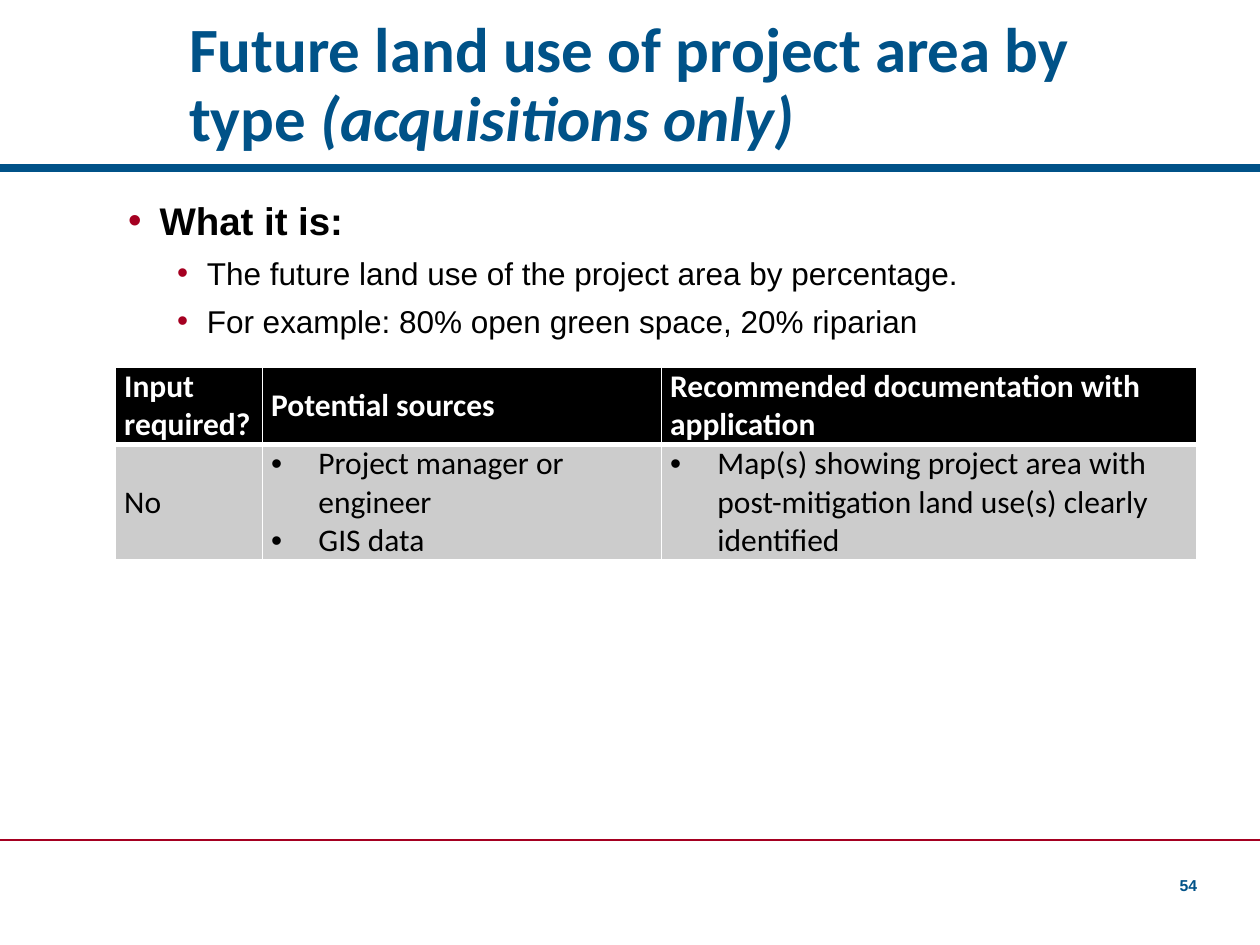
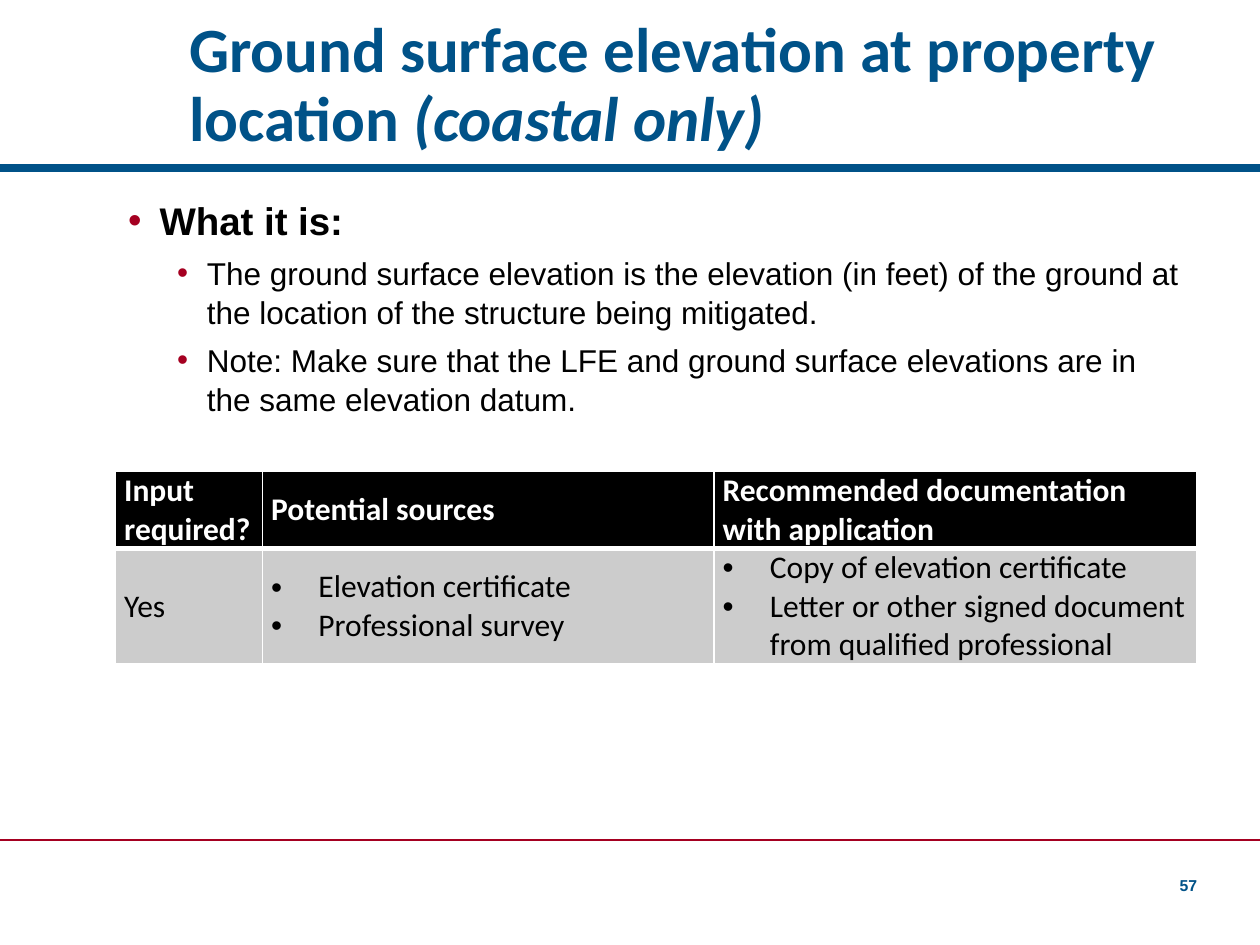
"""Build two slides describing land use and ground elevation inputs."""
from lxml import etree
from pptx import Presentation
from pptx.dml.color import RGBColor
from pptx.enum.shapes import MSO_CONNECTOR
from pptx.enum.text import MSO_ANCHOR, MSO_AUTO_SIZE, PP_ALIGN
from pptx.oxml.ns import qn
from pptx.util import Pt

BLUE = RGBColor(0x00, 0x52, 0x88)
RED = RGBColor(0xA5, 0x00, 0x21)
BLACK = RGBColor(0x00, 0x00, 0x00)
WHITE = RGBColor(0xFF, 0xFF, 0xFF)
GREY = RGBColor(0xCC, 0xCC, 0xCC)
STRAIGHT = MSO_CONNECTOR.STRAIGHT
BOTTOM, MIDDLE, TOP = MSO_ANCHOR.BOTTOM, MSO_ANCHOR.MIDDLE, MSO_ANCHOR.TOP
LEFT, RIGHT = PP_ALIGN.LEFT, PP_ALIGN.RIGHT
NO_AUTOFIT = MSO_AUTO_SIZE.NONE
HEADING_FONT, BODY_FONT = "Calibri", "Arial"
SLIDE_WIDTH, SLIDE_HEIGHT = 720, 540
CONTENT_LEFT, CONTENT_WIDTH = 66, 618
ROW_HEIGHTS = (44, 66)
HEADERS = ("Input required?", "Potential sources",
           "Recommended documentation with application")

SLIDES = (
    {
        "title": "Future land use of project area by type ",
        "qualifier": "(acquisitions only)",
        "points": ("The future land use of the project area by percentage.",
                   "For example: 80% open green space, 20% riparian"),
        "table_top": 210,
        "columns": (84, 228, 306),
        "required": "No",
        "sources": ("Project manager or engineer", "GIS data"),
        "documents": ("Map(s) showing project area with post-mitigation "
                      "land use(s) clearly identified",),
        "number": "54",
    },
    {
        "title": "Ground surface elevation at property location ",
        "qualifier": "(coastal only)",
        "points": ("The ground surface elevation is the elevation (in feet) of the "
                   "ground at the location of the structure being mitigated.",
                   "Note: Make sure that the LFE and ground surface elevations "
                   "are in the same elevation datum."),
        "table_top": 269.5,
        "columns": (84, 258, 276),
        "required": "Yes",
        "sources": ("Elevation certificate", "Professional survey"),
        "documents": ("Copy of elevation certificate",
                      "Letter or other signed document from qualified professional"),
        "number": "57",
    },
)


def place(shape, left, top, width, height):
    """Move and size a shape in points."""
    shape.left, shape.top = Pt(left), Pt(top)
    shape.width, shape.height = Pt(width), Pt(height)


def set_font(paragraph, name, size, color, bold=False):
    """Format the whole paragraph."""
    font = paragraph.font
    font.name, font.size, font.bold = name, Pt(size), bold
    font.color.rgb = color


def set_insets(frame, left, top, right, bottom):
    """Set the inner margins of a text frame or cell in points."""
    frame.margin_left, frame.margin_top = Pt(left), Pt(top)
    frame.margin_right, frame.margin_bottom = Pt(right), Pt(bottom)


def set_bullet(paragraph, indent, hanging, color):
    """Give a paragraph a round bullet with a hanging indent."""
    properties = paragraph._p.get_or_add_pPr()
    properties.set("marL", str(Pt(indent)))
    properties.set("indent", str(-Pt(hanging)))
    bullet_color = etree.SubElement(properties, qn("a:buClr"))
    etree.SubElement(bullet_color, qn("a:srgbClr"), val=str(color))
    etree.SubElement(properties, qn("a:buFont"), typeface="Arial")
    etree.SubElement(properties, qn("a:buChar"), char="•")


def add_rule(slide, top, color, width):
    """Draw a line across the slide."""
    rule = slide.shapes.add_connector(
        STRAIGHT, Pt(0), Pt(top), Pt(SLIDE_WIDTH), Pt(top))
    rule.line.color.rgb = color
    rule.line.width = Pt(width)
    etree.SubElement(rule._element.spPr, qn("a:effectLst"))


def fill_title(slide, title, qualifier):
    """Write the title with its qualifier in italics."""
    shape = slide.shapes.title
    place(shape, 108, 0, 576, 92)
    frame = shape.text_frame
    frame.auto_size = NO_AUTOFIT
    frame.vertical_anchor = BOTTOM
    set_insets(frame, 0, 3.6, 7.2, 3.6)
    paragraph = frame.paragraphs[0]
    paragraph.alignment = LEFT
    paragraph.line_spacing = 0.9
    set_font(paragraph, HEADING_FONT, 36, BLUE, bold=True)
    paragraph.add_run().text = title
    run = paragraph.add_run()
    run.text = qualifier
    run.font.italic = True


def fill_body(slide, points):
    """Write the heading bullet and the points below it."""
    shape = slide.placeholders[1]
    place(shape, CONTENT_LEFT, 108, CONTENT_WIDTH, 342)
    frame = shape.text_frame
    frame.auto_size = NO_AUTOFIT
    frame.vertical_anchor = TOP
    frame.text = "\n".join(("What it is:", *points))
    for index, paragraph in enumerate(frame.paragraphs):
        is_heading = index == 0
        paragraph.level = 0 if is_heading else 1
        paragraph.line_spacing = 1.04
        paragraph.space_before = Pt(0 if is_heading else 5)
        set_bullet(paragraph, 18 if is_heading else 45, 18 if is_heading else 17, RED)
        set_font(paragraph, BODY_FONT, 22 if is_heading else 18, BLACK, is_heading)


def set_borders(cell, top, bottom):
    """Give a cell white borders, 1 point at the sides."""
    properties = cell._tc.get_or_add_tcPr()
    for side, width in (("L", 1), ("R", 1), ("T", top), ("B", bottom)):
        line = etree.SubElement(properties, qn(f"a:ln{side}"), w=str(Pt(width)))
        fill = etree.SubElement(line, qn("a:solidFill"))
        etree.SubElement(fill, qn("a:srgbClr"), val=str(WHITE))


def fill_cell(cell, lines, is_header, bulleted):
    """Write and format one table cell."""
    set_borders(cell, 1 if is_header else 3, 3 if is_header else 1)
    cell.fill.solid()
    cell.fill.fore_color.rgb = BLACK if is_header else GREY
    cell.vertical_anchor = MIDDLE
    set_insets(cell, 5, 0, 5, 0)
    cell.text = "\n".join(lines)
    for paragraph in cell.text_frame.paragraphs:
        if bulleted:
            set_bullet(paragraph, 27, 27, BLACK)
        set_font(paragraph, HEADING_FONT, 18, WHITE if is_header else BLACK, is_header)


def add_input_table(slide, content):
    """Add the table of sources and documentation."""
    rows = ([(header,) for header in HEADERS],
            [(content["required"],), content["sources"], content["documents"]])
    table = slide.shapes.add_table(
        len(rows), len(HEADERS), Pt(CONTENT_LEFT), Pt(content["table_top"]),
        Pt(CONTENT_WIDTH), Pt(sum(ROW_HEIGHTS))).table
    table.horz_banding = False
    for column, width in zip(table.columns, content["columns"]):
        column.width = Pt(width)
    for row_index, row in enumerate(rows):
        table.rows[row_index].height = Pt(ROW_HEIGHTS[row_index])
        for column_index, lines in enumerate(row):
            is_header = row_index == 0
            fill_cell(table.cell(row_index, column_index), lines, is_header,
                      bulleted=not is_header and column_index > 0)


def add_page_number(slide, number):
    """Add the page number at the lower right."""
    box = slide.shapes.add_textbox(Pt(660), Pt(497), Pt(24), Pt(18))
    frame = box.text_frame
    frame.word_wrap = True
    frame.vertical_anchor = BOTTOM
    set_insets(frame, 0, 3.6, 0, 3.6)
    frame.text = number
    paragraph = frame.paragraphs[0]
    paragraph.alignment = RIGHT
    set_font(paragraph, BODY_FONT, 9, BLUE, bold=True)


def main():
    """Build and save the presentation."""
    presentation = Presentation()
    presentation.slide_width = Pt(SLIDE_WIDTH)
    presentation.slide_height = Pt(SLIDE_HEIGHT)
    for content in SLIDES:
        slide = presentation.slides.add_slide(presentation.slide_layouts[1])
        add_rule(slide, 96, BLUE, 4.5)
        add_rule(slide, 480, RED, 1.5)
        fill_title(slide, content["title"], content["qualifier"])
        fill_body(slide, content["points"])
        add_input_table(slide, content)
        add_page_number(slide, content["number"])
    presentation.save("out.pptx")


if __name__ == "__main__":
    main()
